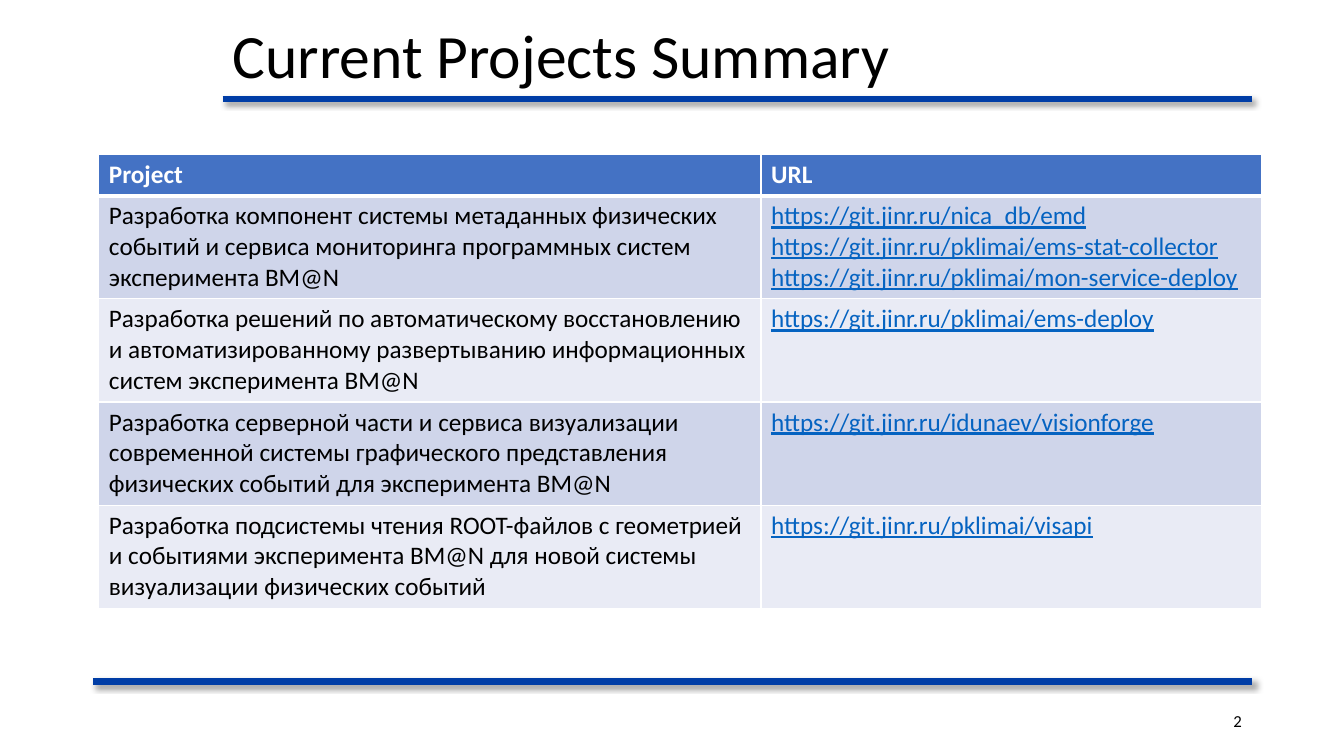
"""Build the project summary slide with its table of repositories."""
import dataclasses

import lxml.etree
import pptx
import pptx.dml.color
import pptx.enum.shapes
import pptx.enum.text
import pptx.oxml
import pptx.oxml.ns
import pptx.util
from pptx.util import Cm


@dataclasses.dataclass(frozen=True)
class Theme:
    font: str = "Calibri"
    title_size: int = 44
    table_size: int = 18
    number_size: int = 12
    text: str = "000000"
    rule: str = "003DA6"
    header: str = "4472C4"
    bands: tuple = ("CFD5EA", "E9EBF5")
    white: str = "FFFFFF"
    link: str = "0563C1"


theme = Theme()
rgb = pptx.dml.color.RGBColor.from_string
qn = pptx.oxml.ns.qn
namespace = pptx.oxml.ns.nsdecls("a")


def add_run(paragraph, text, size, color, bold=False, underline=False):
    """Add one styled run to a paragraph."""
    run = paragraph.add_run()
    run.text = text
    run.font.name = theme.font
    run.font.size = pptx.util.Pt(size)
    run.font.color.rgb = rgb(color)
    run.font.bold = bold
    run.font.underline = underline


def add_border(cell, side, width):
    """Add a white border to one side of a cell."""
    border = lxml.etree.SubElement(
        cell._tc.get_or_add_tcPr(), qn(f"a:ln{side}"), w=str(pptx.util.Pt(width)))
    fill = lxml.etree.SubElement(border, qn("a:solidFill"))
    lxml.etree.SubElement(fill, qn("a:srgbClr"), val=theme.white)


presentation = pptx.Presentation()
presentation.slide_width = Cm(33.87)
presentation.slide_height = Cm(19.05)
slide = presentation.slides.add_slide(presentation.slide_layouts[6])

rule_right = 31.55
for rule_left, rule_top in ((5.61, 2.5), (2.34, 17.17)):
    rule = slide.shapes.add_connector(
        pptx.enum.shapes.MSO_CONNECTOR.STRAIGHT,
        Cm(rule_left), Cm(rule_top), Cm(rule_right), Cm(rule_top))
    rule.line.color.rgb = rgb(theme.rule)
    rule.line.width = pptx.util.Pt(4.5)
    rule._element.spPr.append(pptx.oxml.parse_xml(
        f'<a:effectLst {namespace}><a:outerShdw blurRad="50800" dist="38100" '
        'dir="2700000" algn="tl" rotWithShape="0"><a:srgbClr val="000000">'
        '<a:alpha val="40000"/></a:srgbClr></a:outerShdw></a:effectLst>'))

align = pptx.enum.text.PP_ALIGN
for text, left, top, width, height, size, alignment, spacing in (
    ("Current Projects Summary", 5.61, 0.28, 25.93, 2.41,
     theme.title_size, align.LEFT, 0.9),
    ("2", 23.93, 17.65, 7.62, 1.02, theme.number_size, align.RIGHT, 1.0),
):
    frame = slide.shapes.add_textbox(Cm(left), Cm(top), Cm(width), Cm(height)).text_frame
    frame.word_wrap = True
    frame.vertical_anchor = pptx.enum.text.MSO_ANCHOR.MIDDLE
    paragraph = frame.paragraphs[0]
    paragraph.alignment = alignment
    paragraph.line_spacing = spacing
    add_run(paragraph, text, size, theme.text)

rows = [
    ("Project", ["URL"]),
    ("Разработка компонент системы метаданных физических событий и сервиса "
     "мониторинга программных систем эксперимента BM@N",
     ["https://git.jinr.ru/nica_db/emd",
      "https://git.jinr.ru/pklimai/ems-stat-collector",
      "https://git.jinr.ru/pklimai/mon-service-deploy"]),
    ("Разработка решений по автоматическому восстановлению и автоматизированному "
     "развертыванию информационных систем эксперимента BM@N",
     ["https://git.jinr.ru/pklimai/ems-deploy"]),
    ("Разработка серверной части и сервиса визуализации современной системы "
     "графического представления физических событий для эксперимента BM@N",
     ["https://git.jinr.ru/idunaev/visionforge"]),
    ("Разработка подсистемы чтения ROOT-файлов с геометрией и событиями "
     "эксперимента BM@N для новой системы визуализации физических событий",
     ["https://git.jinr.ru/pklimai/visapi"]),
]
column_widths = (16.69, 12.62)
header_height, row_height = 1.04, 2.6
table = slide.shapes.add_table(
    len(rows), len(column_widths), Cm(2.49), Cm(3.89), Cm(sum(column_widths)),
    Cm(header_height + row_height * (len(rows) - 1))).table
for column, width in zip(table.columns, column_widths):
    column.width = Cm(width)

for row_index, (project, urls) in enumerate(rows):
    is_header = row_index == 0
    table.rows[row_index].height = Cm(header_height if is_header else row_height)
    for column_index, lines in enumerate(([project], urls)):
        cell = table.cell(row_index, column_index)
        for side in "LRTB":
            heavy = (row_index, side) in ((0, "B"), (1, "T"))
            add_border(cell, side, 3 if heavy else 1)
        cell.fill.solid()
        cell.fill.fore_color.rgb = rgb(
            theme.header if is_header else theme.bands[(row_index - 1) % 2])
        is_link = column_index == 1 and not is_header
        color = theme.white if is_header else theme.link if is_link else theme.text
        for line_index, line in enumerate(lines):
            frame = cell.text_frame
            paragraph = frame.add_paragraph() if line_index else frame.paragraphs[0]
            add_run(paragraph, line, theme.table_size, color, is_header, is_link)

presentation.save("out.pptx")
